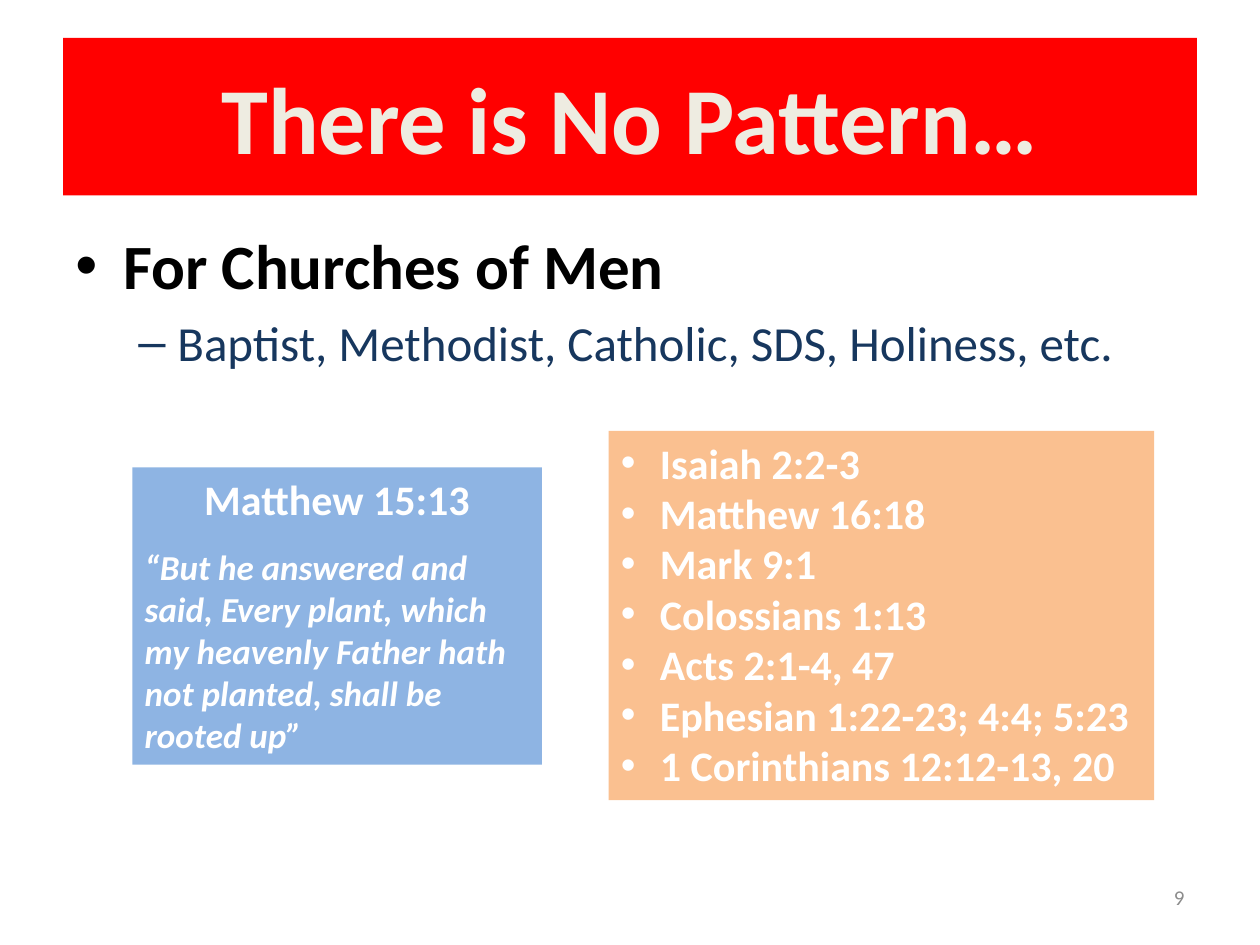
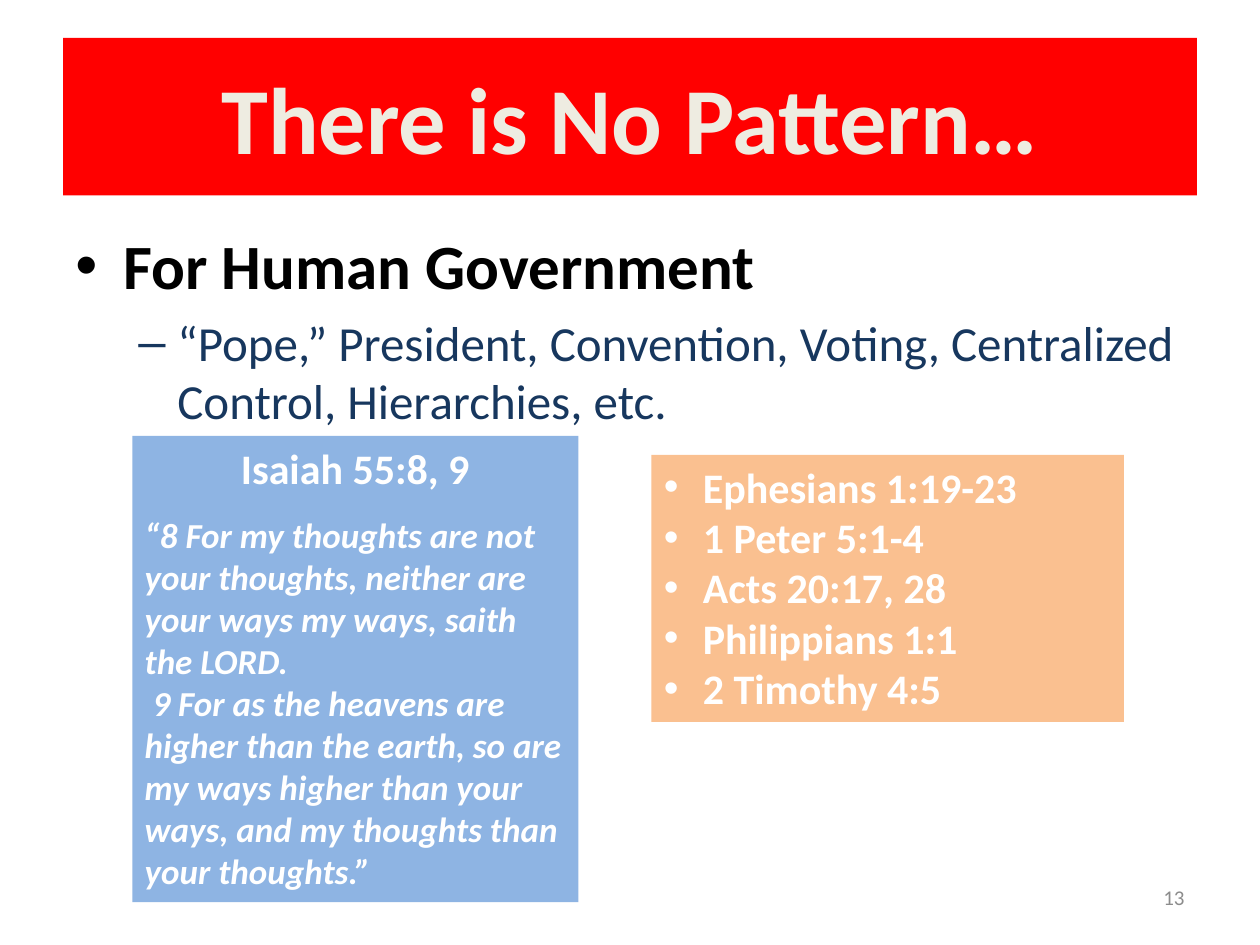
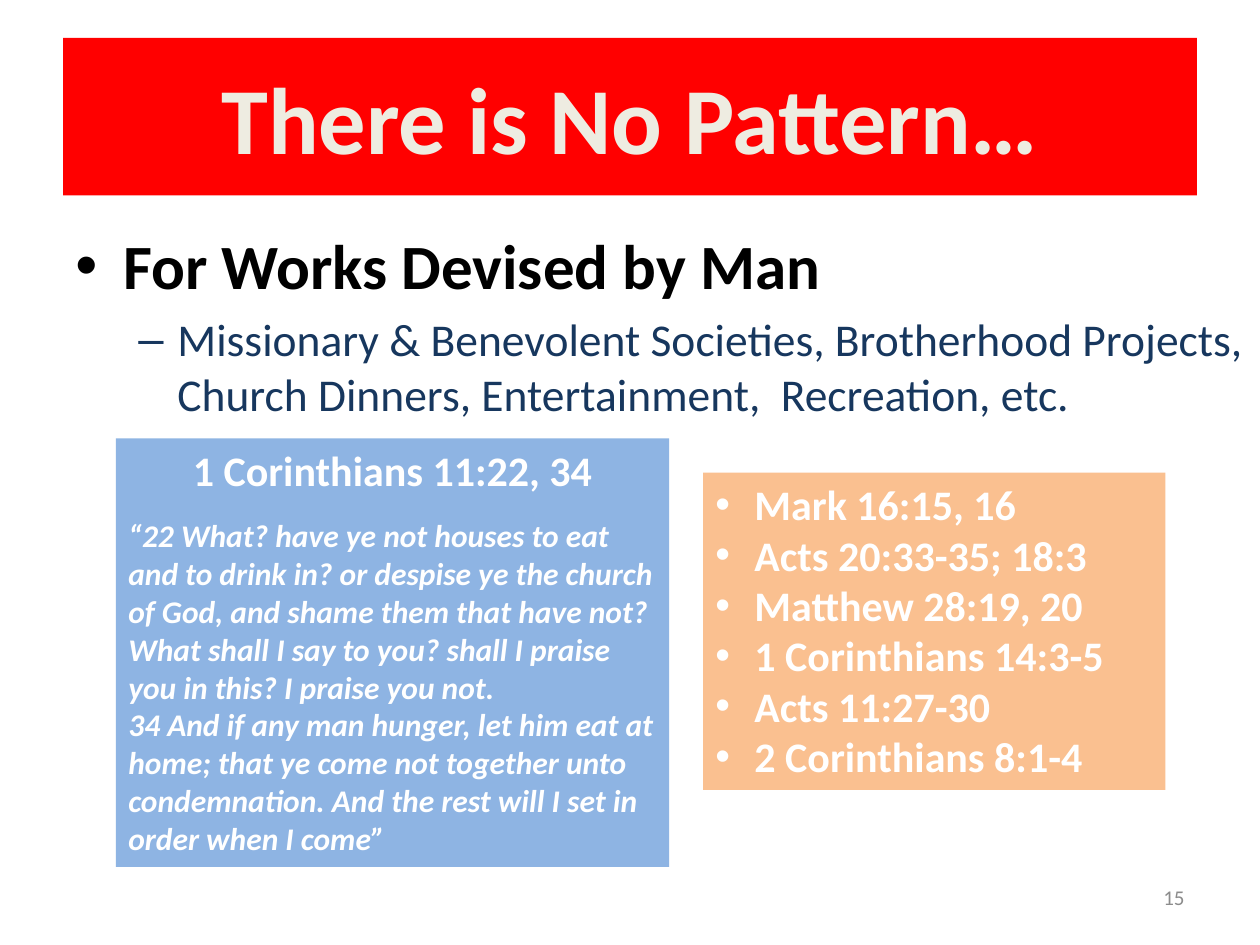
from pptx import Presentation
from pptx.dml.color import RGBColor
from pptx.enum.shapes import MSO_SHAPE
from pptx.enum.text import MSO_ANCHOR, MSO_AUTO_SIZE, PP_ALIGN
from pptx.oxml.xmlchemy import OxmlElement
from pptx.util import Inches, Pt

FONT = "Calibri"
RED = RGBColor(0xFF, 0x00, 0x00)
CREAM = RGBColor(0xEE, 0xEC, 0xE1)
BLACK = RGBColor(0x00, 0x00, 0x00)
NAVY = RGBColor(0x17, 0x37, 0x5E)
BLUE = RGBColor(0x8E, 0xB4, 0xE3)
ORANGE = RGBColor(0xFA, 0xC0, 0x90)
WHITE = RGBColor(0xFF, 0xFF, 0xFF)
GRAY = RGBColor(0x8C, 0x8C, 0x8C)

TITLE = "There is No Pattern…"
TITLE_BOX = (0.5, 0.3, 9, 1.25)
NUMBER_BOX = (7.17, 6.92, 2.33, 0.4)

SLIDES = [
    {
        "number": 9,
        "point": "For Churches of Men",
        "detail": "Baptist, Methodist, Catholic, SDS, Holiness, etc.",
        "detail_size": 28,
        "point_width": 8.67,
        "passage": "Matthew 15:13",
        "verses": ["“But he answered and said, Every plant, which my heavenly "
                   "Father hath not planted, shall be rooted up”"],
        "verse_size": 20,
        "verse_box": (1.05, 3.71, 3.25, 2.36),
        "references": ["Isaiah 2:2-3", "Matthew 16:18", "Mark 9:1",
                       "Colossians 1:13", "Acts 2:1-4, 47",
                       "Ephesian 1:22-23; 4:4; 5:23",
                       "1 Corinthians 12:12-13, 20"],
        "reference_box": (4.83, 3.42, 4.33, 2.93),
    },
    {
        "number": 13,
        "point": "For Human Government",
        "detail": "“Pope,” President, Convention, Voting, Centralized "
                  "Control, Hierarchies, etc.",
        "detail_size": 28,
        "point_width": 9.08,
        "passage": "Isaiah 55:8, 9",
        "verses": ["“8 For my thoughts are not your thoughts, neither are your "
                   "ways my ways, saith the LORD.",
                   " 9 For as the heavens are higher than the earth, so are my "
                   "ways higher than your ways, and my thoughts than your "
                   "thoughts.”"],
        "verse_size": 20,
        "verse_box": (1.05, 3.46, 3.54, 3.7),
        "references": ["Ephesians 1:19-23", "1 Peter 5:1-4", "Acts 20:17, 28",
                       "Philippians 1:1", "2 Timothy 4:5"],
        "reference_box": (5.17, 3.61, 3.75, 2.12),
    },
    {
        "number": 15,
        "point": "For Works Devised by Man",
        "detail": "Missionary & Benevolent Societies, Brotherhood Projects, "
                  "Church Dinners, Entertainment,  Recreation, etc.",
        "detail_size": 26,
        "point_width": 9.5,
        "passage": "1 Corinthians 11:22, 34",
        "verses": ["“22 What? have ye not houses to eat and to drink in? or "
                   "despise ye the church of God, and shame them that have not? "
                   "What shall I say to you? shall I praise you in this? I "
                   "praise you not.",
                   "34 And if any man hunger, let him eat at home; that ye come "
                   "not together unto condemnation. And the rest will I set in "
                   "order when I come”"],
        "verse_size": 18,
        "verse_box": (0.92, 3.48, 4.39, 3.4),
        "references": ["Mark 16:15, 16", "Acts 20:33-35; 18:3",
                       "Matthew 28:19, 20", "1 Corinthians 14:3-5",
                       "Acts 11:27-30", "2 Corinthians 8:1-4"],
        "reference_box": (5.58, 3.75, 3.67, 2.52),
    },
]


def inches(box):
    return [Inches(v) for v in box]


def add_paragraph(tf, text, size, color, bold=False, italic=False,
                  align=PP_ALIGN.LEFT):
    """Fill the frame's first paragraph if it is still empty, else append one."""
    p = tf.paragraphs[0]
    if p.runs:
        p = tf.add_paragraph()
    p.alignment = align
    r = p.add_run()
    r.text = text
    font = r.font
    font.name, font.size, font.color.rgb = FONT, Pt(size), color
    font.bold, font.italic = bold, italic
    return p


def set_bullet(p, char, left, hang):
    """Hang a bullet character before text that starts at left inches."""
    pPr = p._p.get_or_add_pPr()
    pPr.set("marL", str(Inches(left)))
    pPr.set("indent", str(-Inches(hang)))
    typeface = OxmlElement("a:buFont")
    typeface.set("typeface", "Arial")
    bullet = OxmlElement("a:buChar")
    bullet.set("char", char)
    pPr.extend([typeface, bullet])


def add_text_frame(slide, box):
    tf = slide.shapes.add_textbox(*inches(box)).text_frame
    tf.word_wrap = True
    return tf


def add_panel(slide, box, color):
    sp = slide.shapes.add_shape(MSO_SHAPE.RECTANGLE, *inches(box))
    sp.shadow.inherit = False
    sp.fill.solid()
    sp.fill.fore_color.rgb = color
    sp.line.fill.background()
    tf = sp.text_frame
    tf.word_wrap = True
    tf.vertical_anchor = MSO_ANCHOR.TOP
    tf.auto_size = MSO_AUTO_SIZE.SHAPE_TO_FIT_TEXT
    return tf


def add_title(slide):
    title = slide.shapes.title
    title.left, title.top, title.width, title.height = inches(TITLE_BOX)
    title.fill.solid()
    title.fill.fore_color.rgb = RED
    title.text_frame.vertical_anchor = MSO_ANCHOR.MIDDLE
    add_paragraph(title.text_frame, TITLE, 54, CREAM, bold=True,
                  align=PP_ALIGN.CENTER)


def add_point(slide, content):
    tf = add_text_frame(slide, (0.5, 1.75, content["point_width"], 4.95))
    p = add_paragraph(tf, content["point"], 36, BLACK, bold=True)
    p.space_before = Pt(7.2)
    set_bullet(p, "•", 0.38, 0.38)
    size = content["detail_size"]
    p = add_paragraph(tf, content["detail"], size, NAVY)
    p.level = 1
    p.space_before = Pt(size * 0.2)
    set_bullet(p, "–", 0.81, 0.31)


def add_number(slide, number):
    tf = add_text_frame(slide, NUMBER_BOX)
    tf.vertical_anchor = MSO_ANCHOR.MIDDLE
    add_paragraph(tf, str(number), 12, GRAY, align=PP_ALIGN.RIGHT)


def add_references(slide, content):
    tf = add_panel(slide, content["reference_box"], ORANGE)
    for reference in content["references"]:
        p = add_paragraph(tf, reference, 24, WHITE, bold=True)
        set_bullet(p, "•", 0.31, 0.31)


def add_passage(slide, content):
    tf = add_panel(slide, content["verse_box"], BLUE)
    p = add_paragraph(tf, content["passage"], 24, WHITE, bold=True,
                      align=PP_ALIGN.CENTER)
    p.space_after = Pt(12.2)
    for verse in content["verses"]:
        add_paragraph(tf, verse, content["verse_size"], WHITE, bold=True,
                      italic=True)


def main():
    prs = Presentation()
    prs.slide_width, prs.slide_height = Inches(10), Inches(7.5)
    title_only = prs.slide_layouts[5]
    for content in SLIDES:
        slide = prs.slides.add_slide(title_only)
        add_title(slide)
        add_point(slide, content)
        add_number(slide, content["number"])
        add_references(slide, content)
        add_passage(slide, content)
    prs.save("out.pptx")


if __name__ == "__main__":
    main()
